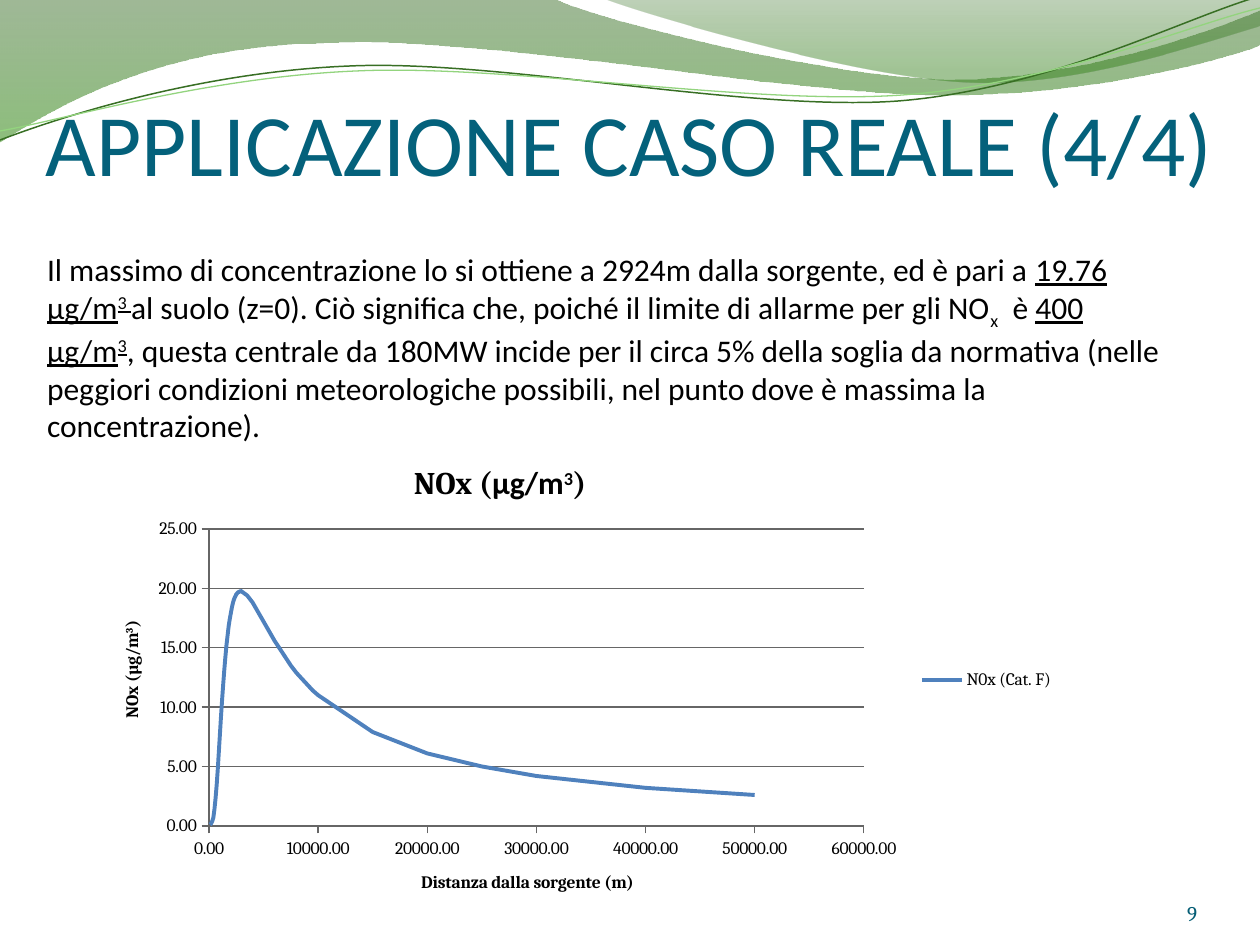
from lxml.etree import SubElement
from pptx import Presentation
from pptx.chart.data import XyChartData
from pptx.dml.color import RGBColor
from pptx.enum.chart import XL_CHART_TYPE as ChartType, XL_LEGEND_POSITION as LegendPos
from pptx.enum.chart import XL_TICK_MARK as Tick
from pptx.enum.text import MSO_ANCHOR as Anchor, PP_ALIGN as Align
from pptx.oxml.ns import qn
from pptx.util import Pt

PX = 914400 / 126
COLORS = {
    "title": "04617B", "number": "045D75", "text": "000000", "series": "4F81BD",
    "axis": "666666", "dark line": "386F24", "light line": "93D47E",
}

# Curves: start point, then segments of 1 point (line) or 3 points (Bézier)
BANDS = [
    ((0, 0), [
        [(554, -1)], [(600, 21), (837, 79), (955, 79)],
        [(1075, 79), (1207, 33), (1260, 11)], [(1261, 45)],
        [(1239, 55), (1096, 96), (940, 95)], [(784, 94), (481, 35), (324, 43)],
        [(163, 45), (58, 105), (-1, 142)], [(0, 0)],
    ], [("2C6418", 0, 45), ("2F8810", 100, 55)]),
    ((604, -1), [
        [(641, 14), (859, 78), (969, 82)], [(1079, 87), (1211, 40), (1260, 26)],
        [(1260, 0)], [(604, -1)],
    ], [("2A6715", 0, 30), ("307E15", 80, 45)]),
]
WAVES = [
    ((0, 140), [
        [(60, 117), (199, 72), (349, 66)], [(498, 59), (747, 112), (898, 101)],
        [(1049, 89), (1182, 19), (1257, -3)],
    ], "dark line", 0.85),
    ((0, 131), [
        [(59, 121), (207, 77), (357, 71)], [(508, 64), (752, 106), (903, 95)],
        [(1053, 84), (1186, 26), (1260, 8)],
    ], "light line", 0.75),
]

# Text runs: text, underlined, baseline shift in percent
BODY = [
    ("Il massimo di concentrazione lo si ottiene a 2924m dalla sorgente, ed è pari a ", False, 0),
    ("19.76 µg/m", True, 0), ("3 ", True, 30),
    ("al suolo (z=0). Ciò significa che, poiché il limite di allarme per gli NO", False, 0),
    ("x", False, -25), ("  è ", False, 0), ("400 µg/m", True, 0), ("3", True, 30),
    (", questa centrale da 180MW incide per il circa 5% della soglia da normativa (nelle "
     "peggiori condizioni meteorologiche possibili, nel punto dove è massima la "
     "concentrazione).", False, 0),
]
CHART_TITLE = [("NOx (", "Cambria", 0), ("µg/m", "Calibri", 0), ("3", "Calibri", 30),
               (")", "Cambria", 0)]
Y_TITLE = [("NOx (µg/m", "Cambria", 0), ("3", "Cambria", 30), (")", "Cambria", 0)]
X_TITLE = [("Distanza dalla sorgente (m)", "Cambria", 0)]

CHART_BOX = (84, 442, 983, 476)
DISTANCES = [*range(100, 3000, 100), 2924, *range(3500, 10001, 500),
             15000, 20000, 25000, 30000, 40000, 50000]
NOX = [
    0.1, 0.2, 0.4, 0.7, 1.4, 2.3, 3.4, 4.7, 6.2, 7.7, 9.2, 10.6, 11.9, 13.1, 14.2, 15.2, 16,
    16.8, 17.4, 17.9, 18.4, 18.8, 19.1, 19.3, 19.5, 19.6, 19.7, 19.7, 19.8, 19.8,
    19.4, 18.8, 18, 17.2, 16.4, 15.6, 14.9, 14.2, 13.5, 12.9, 12.4, 11.9, 11.4, 11,
    7.9, 6.1, 5, 4.2, 3.2, 2.6,
]


def px(value):
    return round(value * PX)


def color(name):
    return RGBColor.from_string(COLORS[name])


def set_font(font, size, face, name="text", bold=None):
    font.size, font.name, font.bold = Pt(size), face, bold
    font.color.rgb = color(name)


def set_baseline(span, percent):
    if percent:
        span.font._element.set("baseline", str(percent * 1000))


def add_curve(page, start, segments, close):
    """Draw a freeform, then merge each three-point segment into one Bézier."""
    builder = page.shapes.build_freeform(*map(px, start), scale=1.0)
    builder.add_line_segments([(px(x), px(y)) for part in segments for x, y in part], close=close)
    shape = builder.convert_to_shape()
    shape.shadow.inherit = False
    lines = iter(list(shape._element.iter(qn("a:lnTo"))))
    for part in segments:
        first, *others = [next(lines) for _ in part]
        if others:
            bezier = first.makeelement(qn("a:cubicBezTo"))
            first.addprevious(bezier)
            for line in (first, *others):
                bezier.append(line[0])
                line.getparent().remove(line)
    return shape


def add_text(page, place, anchor, insets):
    box = page.shapes.add_textbox(*map(px, place))
    frame = box.text_frame
    frame.word_wrap, frame.vertical_anchor = True, anchor
    (frame.margin_left, frame.margin_top,
     frame.margin_right, frame.margin_bottom) = map(px, insets)
    return frame.paragraphs[0]


def fill_title(owner, runs, size):
    para = owner.text_frame.paragraphs[0]
    for text, face, shift in runs:
        span = para.add_run()
        span.text = text
        set_font(span.font, size, face, bold=True)
        set_baseline(span, shift)


def set_layout(element, x, y, size=None):
    """Place a chart part by px measured from the corner of the chart."""
    layout = element.find(qn("c:layout"))
    if layout is None:
        layout = element.makeelement(qn("c:layout"))
        text = element.find(qn("c:tx"))
        if text is None:
            element.insert(0, layout)
        else:
            text.addnext(layout)
    width, height = CHART_BOX[2:]
    settings = {"layoutTarget": "inner"} if size else {}
    settings |= {"xMode": "edge", "yMode": "edge", "x": x / width, "y": y / height}
    if size:
        settings |= {"w": size[0] / width, "h": size[1] / height}
    manual = SubElement(layout, qn("c:manualLayout"))
    for key, value in settings.items():
        SubElement(manual, qn(f"c:{key}")).set("val", str(value))


deck = Presentation()
deck.slide_width, deck.slide_height = px(1260), px(945)
page = deck.slides.add_slide(deck.slide_layouts[6])

# Green bands and wave lines
for start, segments, stops in BANDS:
    band = add_curve(page, start, segments, True)
    band.line.fill.background()
    band.fill.gradient()
    band.fill.gradient_angle = 270
    for stop, (tone, position, opacity) in zip(band.fill.gradient_stops, stops):
        stop.color.rgb, stop.position = RGBColor.from_string(tone), position / 100
        SubElement(stop._gs.find(qn("a:srgbClr")), qn("a:alpha")).set("val", str(opacity * 1000))
for start, segments, tone, width in WAVES:
    wave = add_curve(page, start, segments, False)
    wave.fill.background()
    wave.line.color.rgb, wave.line.width = color(tone), Pt(width)

# Title, page number and body
para = add_text(page, (0, 37, 1260, 157), Anchor.BOTTOM, (0, 6, 0, 0))
para.text, para.alignment = "APPLICAZIONE CASO REALE (4/4)", Align.CENTER
set_font(para.font, 50, "Calibri", "title")
para = add_text(page, (1092, 876, 105, 50), Anchor.BOTTOM, (0, 0, 0, 0))
para.text, para.alignment = "9", Align.RIGHT
set_font(para.font, 12, "Cambria", "number")
para = add_text(page, (35, 244, 1150, 204), Anchor.TOP, (12, 6, 12, 6))
set_font(para.font, 18, "Calibri")
for text, underlined, shift in BODY:
    span = para.add_run()
    span.text = text
    if underlined:
        span.font.underline = True
    set_baseline(span, shift)

# Concentration chart
data = XyChartData()
curve = data.add_series("N0x (Cat. F)")
for distance, value in zip(DISTANCES, NOX):
    curve.add_data_point(distance, value)
chart = page.shapes.add_chart(ChartType.XY_SCATTER_LINES_NO_MARKERS,
                              *map(px, CHART_BOX), data).chart
set_font(chart.font, 10, "Cambria")
chart.plots[0].vary_by_categories = False
line = chart.plots[0].series[0]
line.smooth = False
line.format.line.color.rgb, line.format.line.width = color("series"), Pt(2.25)

chart.has_title = True
fill_title(chart.chart_title, CHART_TITLE, 18)
for axis, top, unit, runs in [(chart.category_axis, 60000, 10000, X_TITLE),
                              (chart.value_axis, 25, 5, Y_TITLE)]:
    axis.minimum_scale, axis.maximum_scale, axis.major_unit = 0, top, unit
    axis.major_tick_mark, axis.minor_tick_mark = Tick.OUTSIDE, Tick.NONE
    axis.tick_labels.number_format, axis.tick_labels.number_format_is_linked = "0.00", False
    axis.format.line.color.rgb = color("axis")
    fill_title(axis.axis_title, runs, 10)
chart.category_axis.has_major_gridlines = False
chart.value_axis.major_gridlines.format.line.color.rgb = color("axis")
chart.has_legend = True
chart.legend.position, chart.legend.include_in_layout = LegendPos.RIGHT, False

set_layout(chart.chart_title._element, 326, 16)
set_layout(chart.value_axis.axis_title._element, 32, 175)
set_layout(chart._chartSpace.chart.plotArea, 125, 87, (655, 297))

deck.save("out.pptx")
